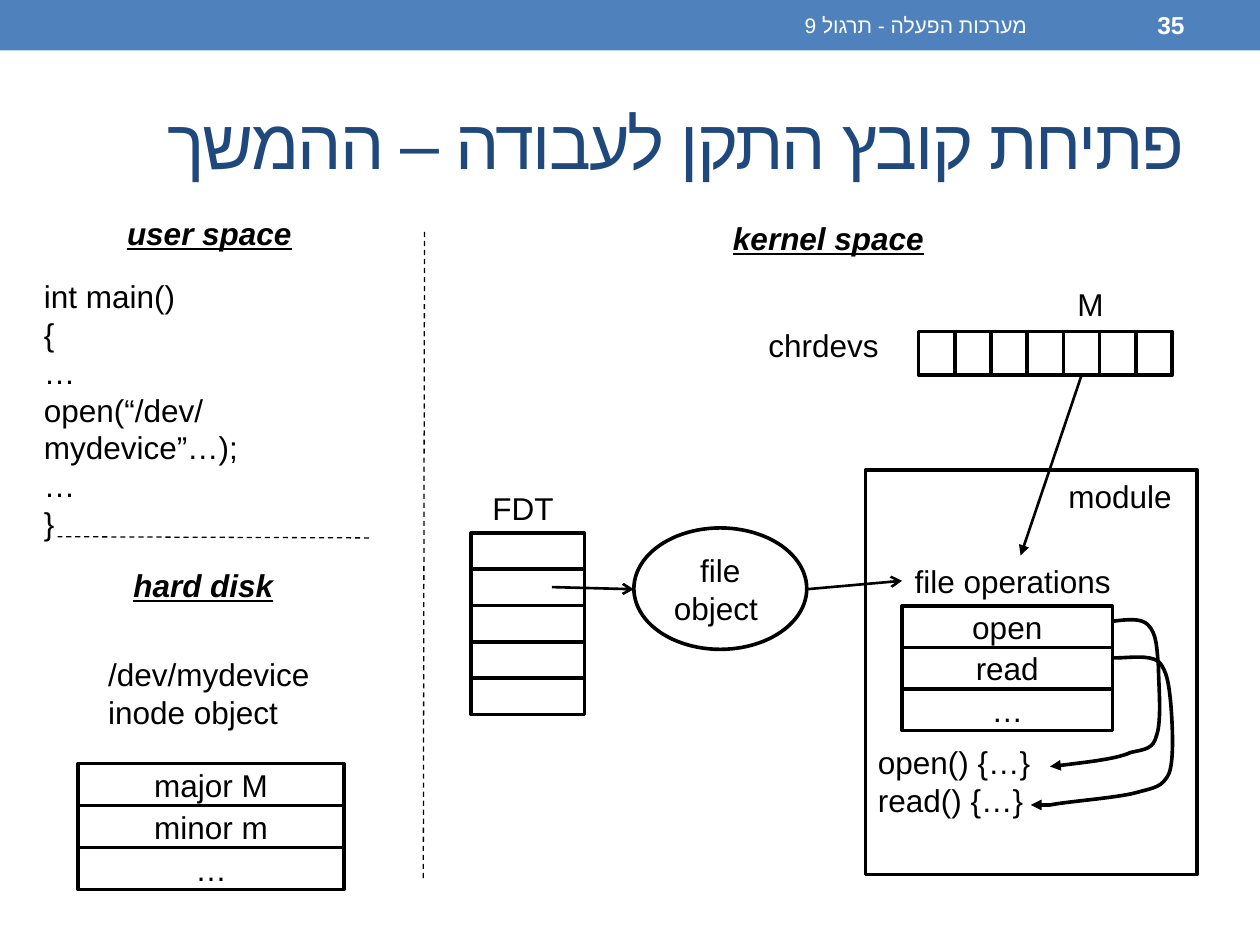
from dataclasses import dataclass

from lxml import etree
from pptx import Presentation
from pptx import util as u
from pptx.dml.color import RGBColor
from pptx.enum import dml, shapes, text
from pptx.oxml.ns import qn

RECT = shapes.MSO_SHAPE.RECTANGLE
OVAL = shapes.MSO_SHAPE.OVAL
TOP, LEFT, BOTTOM = 0, 1, 2


@dataclass(frozen=True)
class Theme:
    font: str = "Arial"
    ink: str = "000000"
    paper: str = "FFFFFF"
    band: str = "4F81BD"
    heading: str = "1F497D"
    title: int = 40
    body: int = 18
    number: int = 14
    footer: int = 12
    outline: float = 2.08
    arrow: float = 1.5
    dash: float = 0.75


class Sketch:
    """Draws diagram elements on one page in a shared style."""

    def __init__(self, page, theme):
        self.page = page
        self.theme = theme

    def add_text(self, frame, lines, size=None, color=None, align=None, rtl=False,
                 bold=None, italic=None, underline=None, spacing=None):
        for index, line in enumerate(lines):
            para = frame.paragraphs[0] if index == 0 else frame.add_paragraph()
            para.alignment = align or text.PP_ALIGN.LEFT
            if rtl:
                para._p.get_or_add_pPr().set("rtl", "1")
            for part, content in enumerate(line.split("\n")):
                if part:
                    para.add_line_break()
                span = para.add_run()
                span.text = content
                font = span.font
                font.name = self.theme.font
                font.size = u.Pt(size or self.theme.body)
                font.color.rgb = RGBColor.from_string(color or self.theme.ink)
                font.bold, font.italic, font.underline = bold, italic, underline
                props = span._r.get_or_add_rPr()
                etree.SubElement(props, qn("a:cs"), typeface=self.theme.font)
                if spacing:
                    props.set("spc", str(spacing))

    def label(self, bounds, *lines, wrap=True, anchor=text.MSO_ANCHOR.TOP, **style):
        box = self.page.shapes.add_textbox(*map(u.Pt, bounds))
        box.text_frame.word_wrap = wrap
        box.text_frame.vertical_anchor = anchor
        self.add_text(box.text_frame, lines, **style)
        return box

    def heading(self, bounds, content):
        self.label(bounds, content, wrap=False, bold=True, italic=True, underline=True)

    def banner(self, bounds, content, **style):
        self.label(bounds, content, anchor=text.MSO_ANCHOR.MIDDLE,
                   align=text.PP_ALIGN.RIGHT, rtl=True, **style)

    def shape(self, bounds, content="", kind=RECT, fill=None, outlined=True):
        box = self.page.shapes.add_shape(kind, *map(u.Pt, bounds))
        self.finish(box, fill, outlined)
        if content:
            box.text_frame.word_wrap = True
            box.text_frame.vertical_anchor = text.MSO_ANCHOR.MIDDLE
            self.add_text(box.text_frame, [content], align=text.PP_ALIGN.CENTER)
        return box

    def finish(self, box, fill=None, outlined=True):
        box.shadow.inherit = False
        if fill:
            box.fill.solid()
            box.fill.fore_color.rgb = RGBColor.from_string(fill)
        else:
            box.fill.background()
        if outlined:
            self.stroke(box.line, self.theme.outline)
        else:
            box.line.fill.background()

    def stroke(self, line, width, head=None):
        line.color.rgb = RGBColor.from_string(self.theme.ink)
        line.width = u.Pt(width)
        if head:
            etree.SubElement(line._get_or_add_ln(), qn("a:tailEnd"), type=head)

    def cells(self, bounds, contents, across=False, fill=None):
        x, y, width, height = bounds
        return [
            self.shape((x + i * width * across, y + i * height * (not across),
                        width, height), content, fill=fill)
            for i, content in enumerate(contents)
        ]

    def line(self, start, end, head=None, begin=None, finish=None):
        link = self.page.shapes.add_connector(
            shapes.MSO_CONNECTOR.STRAIGHT, *map(u.Pt, start + end))
        if begin:
            link.begin_connect(*begin)
        if finish:
            link.end_connect(*finish)
        self.stroke(link.line, self.theme.arrow if head else self.theme.dash, head)
        if not head:
            link.line.dash_style = dml.MSO_LINE.DASH
        etree.SubElement(link._element.spPr, qn("a:effectLst"))

    def curve(self, start, *points):
        """Draw an arrow along cubic segments given as triples of points."""
        builder = self.page.shapes.build_freeform(*start, scale=u.Pt(1))
        builder.add_line_segments(points, close=False)
        outline = builder.convert_to_shape()
        route = next(outline._element.iter(qn("a:path")))
        steps = route.findall(qn("a:lnTo"))
        for first in range(0, len(steps), 3):
            bend = etree.SubElement(route, qn("a:cubicBezTo"))
            for step in steps[first:first + 3]:
                bend.append(step[0])
                route.remove(step)
        self.finish(outline)
        self.stroke(outline.line, self.theme.outline, "triangle")


def main():
    theme = Theme()
    deck = Presentation()
    deck.slide_width, deck.slide_height = u.Pt(720), u.Pt(540)
    page = deck.slides.add_slide(deck.slide_layouts[6])
    sketch = Sketch(page, theme)

    sketch.shape((0, 0, 720, 28.8), fill=theme.band, outlined=False)
    sketch.banner((36, 42, 648, 78), "פתיחת קובץ התקן לעבודה – ההמשך",
                  size=theme.title, color=theme.heading, spacing=-100)
    sketch.banner((270, 1.4, 324, 26), "מערכות הפעלה - תרגול 9",
                  size=theme.footer, color=theme.paper)
    sketch.banner((600, 1.4, 84, 26), "35",
                  size=theme.number, color=theme.paper, bold=True)

    sketch.line((242.6, 132.5), (241.9, 502.6))
    sketch.line((211, 307.4), (33, 306.7))
    sketch.heading((65.5, 118.8, 109.4, 28.8), "user space")
    sketch.heading((411.8, 121.7, 124.6, 28.8), "kernel space")
    sketch.heading((69.1, 319.7, 95, 28.8), "hard disk")

    sketch.label((18, 154.8, 211, 138.2), "int main()", "{", "…",
                 "open(“/dev/mydevice”…);", "…", "}")
    sketch.label((54.7, 370.8, 130.3, 51.1), "/dev/mydevice\ninode object", wrap=False)
    sketch.cells((44.6, 436.3, 152, 24), ["major M", "minor m", "…"], fill=theme.paper)

    devices = sketch.cells((524.9, 189.4, 20.7, 25), [""] * 7, across=True)
    sketch.label((608.6, 161.3, 20.9, 25.2), "M", wrap=False,
                 anchor=text.MSO_ANCHOR.MIDDLE, align=text.PP_ALIGN.CENTER)
    sketch.label((432, 182.9, 82, 28.8), "chrdevs")

    sketch.shape((494.6, 268.6, 189.4, 231.1), fill=theme.paper)
    sketch.label((603.4, 269.3, 75.6, 28.8), "module")
    operations = sketch.label((515.5, 317.5, 135.4, 28.8), "file operations")
    sketch.cells((515.5, 346.3, 120.2, 23.7), ["open", "read", "…"])
    sketch.label((494.6, 421.2, 129.6, 51.1), "open() {…}", "read() {…}")
    sketch.curve((636, 355), (644, 353.5), (652, 353), (656.5, 357),
                 (661, 361.5), (661, 370), (661.5, 381),
                 (662.5, 391), (664, 411), (661, 420),
                 (659, 428), (655, 428), (646.5, 430.5),
                 (638, 433.5), (616.5, 436.5), (609, 437),
                 (601, 438.5), (600.5, 438), (600, 438))
    sketch.curve((636, 376.5), (646, 376), (656, 374.5), (661.5, 378.5),
                 (667, 383), (667.5, 391.5), (669, 402.5),
                 (669.5, 413.5), (671, 433.5), (667.5, 441.5),
                 (664.5, 450), (660, 450), (649, 453),
                 (638, 456), (610.5, 458), (600.5, 459.5),
                 (590.5, 460), (589.5, 460), (589, 460))

    sketch.cells((269.3, 304.6, 64.8, 20.75), [""] * 5)
    sketch.label((274.3, 275.8, 51.1, 28.8), "FDT")
    sketch.shape((362.2, 301.7, 98.8, 69.4), "file object ", kind=OVAL, fill=theme.paper)

    sketch.line((619, 214.4), (583.2, 317.5), "triangle",
                begin=(devices[4], BOTTOM), finish=(operations, TOP))
    sketch.line((315.4, 335.5), (362.2, 336.7), "arrow")
    sketch.line((461, 336.7), (515.5, 331.9), "arrow", finish=(operations, LEFT))

    deck.save("out.pptx")


if __name__ == "__main__":
    main()
